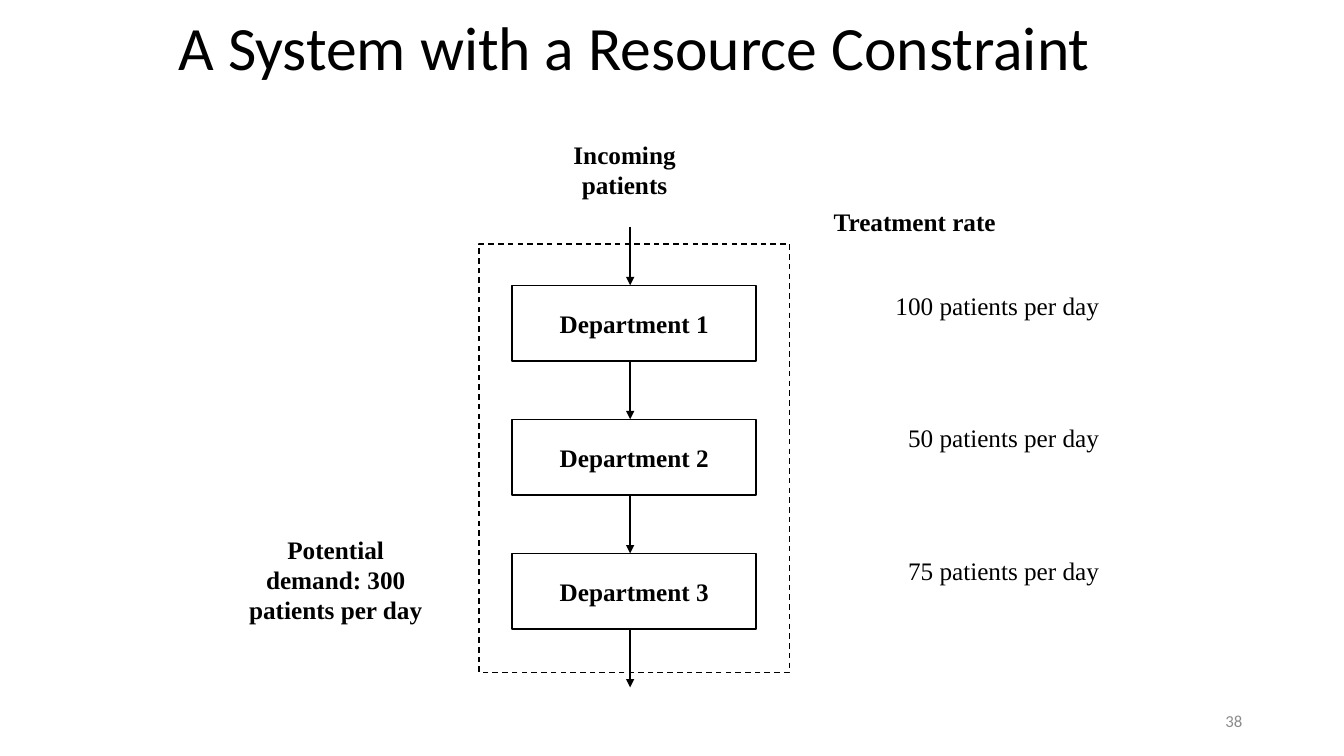
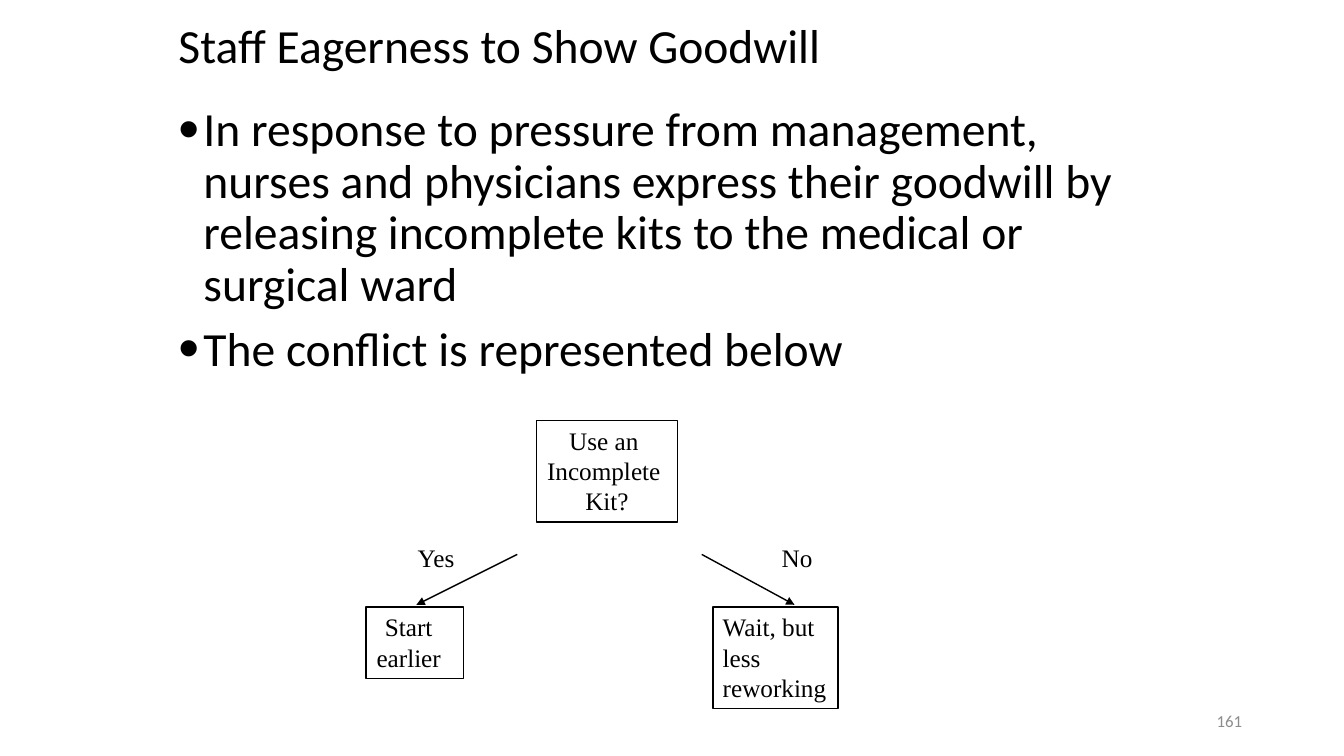
from lxml.etree import SubElement as Sub
from pptx import Presentation
from pptx.dml.color import RGBColor as RGB
from pptx.enum.dml import MSO_LINE as Dash
from pptx.enum.shapes import MSO_CONNECTOR as Link, MSO_SHAPE as Form
from pptx.enum.text import MSO_ANCHOR as Anchor, MSO_AUTO_SIZE as Fit, PP_ALIGN as Align
from pptx.oxml.ns import qn
from pptx.util import Inches, Pt

COLORS = {"ink": "000000", "gray": "8C8C8C"}
SANS, SERIF = "Calibri", "Times New Roman"


def write(shape, text, size=18, font=SERIF, color="ink", bold=False,
          align=Align.CENTER, anchor=Anchor.TOP, wrap=False,
          lead=None, before=None, after=None, bullet=False):
    """Fill a shape with one paragraph per line of text."""
    frame = shape.text_frame
    frame.text = text
    frame.word_wrap = wrap
    frame.auto_size = Fit.NONE
    frame.vertical_anchor = anchor
    for par in frame.paragraphs:
        par.alignment = align
        par.line_spacing = lead
        par.space_before = before
        par.space_after = after
        if bullet:
            props = par._p.get_or_add_pPr()
            props.set("marL", str(Inches(0.25)))
            props.set("indent", str(-Inches(0.25)))
            Sub(props, qn("a:buSzPct"), val="125000")
            Sub(props, qn("a:buFont"), typeface="Arial")
            Sub(props, qn("a:buChar"), char="•")
        for run in par.runs:
            run.font.size = Pt(size)
            run.font.name = font
            run.font.bold = bold
            run.font.color.rgb = RGB.from_string(COLORS[color])


class Deck:
    def __init__(self):
        self.prs = Presentation()
        self.prs.slide_width = Inches(13.33)
        self.prs.slide_height = Inches(7.5)

    def start(self, title, number, size, height):
        """Add a slide with its title and page number."""
        self.slide = self.prs.slides.add_slide(self.prs.slide_layouts[5])
        self.shapes = self.slide.shapes
        head = self.shapes.title
        head.left, head.top = Inches(1.67), Inches(0)
        head.width, head.height = Inches(10), Inches(height)
        write(head, title, size=size, font=SANS, align=Align.LEFT,
              anchor=Anchor.MIDDLE, wrap=True, lead=0.9)
        self.text((9.42, 6.95, 3, 0.4), number, size=12, font=SANS, color="gray",
                  align=Align.RIGHT, anchor=Anchor.MIDDLE, wrap=True)

    def text(self, place, text, **style):
        write(self.shapes.add_textbox(*map(Inches, place)), text, **style)

    def stroke(self, line):
        line.color.rgb = RGB.from_string(COLORS["ink"])
        line.width = Pt(1)

    def box(self, place, text="", dash=None, **style):
        """Add an outlined box without fill."""
        shape = self.shapes.add_shape(Form.RECTANGLE, *map(Inches, place))
        shape.shadow.inherit = False
        shape.fill.background()
        self.stroke(shape.line)
        if dash:
            shape.line.dash_style = dash
        if text:
            write(shape, text, **style)
        return shape

    def arrow(self, *ends):
        link = self.shapes.add_connector(Link.STRAIGHT, *map(Inches, ends))
        self.stroke(link.line)
        Sub(link.line._get_or_add_ln(), qn("a:tailEnd"), type="triangle")
        Sub(link._element.spPr, qn("a:effectLst"))


def system(deck):
    deck.start("A System with a Resource Constraint", "38", 44, 1)

    # Labels around the flow
    deck.text((8.17, 2, 1.83, 0.4), "Treatment rate", bold=True, align=Align.LEFT)
    deck.text((2.36, 5.25, 1.94, 1.01),
              "Potential\ndemand: 300\npatients per day", bold=True)
    deck.text((5.58, 1.33, 1.23, 0.71), "Incoming\npatients", bold=True)

    # Departments, with an arrow into each and one out of the last
    count, top, tall, gap = 3, 2.25, 0.75, 0.58
    step = tall + gap
    for i in range(count + 1):
        y = top + i * step
        deck.arrow(6.25, y, 6.25, y + gap)
        if i < count:
            deck.box((5.08, y + gap, 2.42, tall), f"Department {i + 1}",
                     bold=True, anchor=Anchor.MIDDLE)

    # Rates and the border of the system
    rates = "\n".join(f"{rate} patients per day" for rate in (100, 50, 75))
    deck.text((8.08, 2.83, 2.92, 3.33), rates, align=Align.RIGHT, wrap=True,
              after=Pt(73))
    deck.box((4.75, 2.42, 3.08, 4.25), dash=Dash.DASH)


def goodwill(deck):
    deck.start("Staff Eagerness to Show Goodwill", "161", 34, 0.96)
    deck.text((1.67, 1, 10, 6.5),
              "In response to pressure from management, nurses and physicians "
              "express their goodwill by releasing incomplete kits to the "
              "medical or surgical ward\nThe conflict is represented below",
              size=34, font=SANS, align=Align.LEFT, wrap=True,
              lead=0.9, before=Pt(10), bullet=True)

    # Choice and its two outcomes
    deck.box((5.32, 4.17, 1.4, 1.01), "Use an \nIncomplete \nKit?")
    early = deck.box((3.63, 6.02, 0.97, 0.71), "Start\nearlier")
    early.text_frame.margin_right = Inches(0.22)
    deck.box((7.07, 6.02, 1.24, 1.01), "Wait, but\nless\nreworking", align=Align.LEFT)

    # Branches
    deck.arrow(5.13, 5.5, 4.13, 6)
    deck.arrow(6.96, 5.5, 7.88, 6)
    deck.text((4.04, 5.33, 0.57, 0.4), "Yes")
    deck.text((7.65, 5.33, 0.51, 0.4), "No")


def main():
    deck = Deck()
    system(deck)
    goodwill(deck)
    deck.prs.save("out.pptx")


if __name__ == "__main__":
    main()
